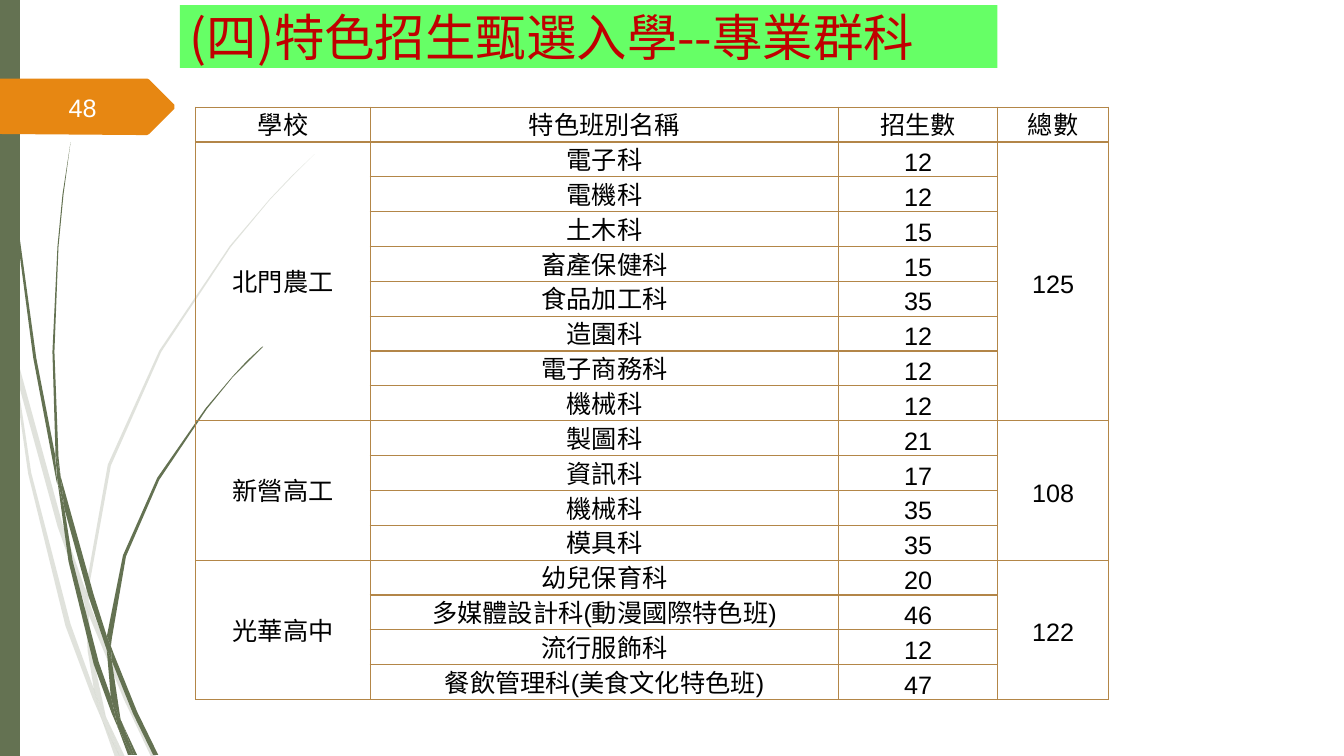
from lxml.etree import SubElement
from pptx import Presentation
from pptx.dml.color import RGBColor
from pptx.enum.shapes import MSO_SHAPE
from pptx.enum.text import MSO_ANCHOR, PP_ALIGN
from pptx.oxml.ns import qn
from pptx.util import Cm, Pt

GREEN = RGBColor(0x64, 0x72, 0x52)
ORANGE = RGBColor(0xE7, 0x87, 0x12)
LIME = RGBColor(0x66, 0xFF, 0x66)
RED = RGBColor(0xC0, 0x00, 0x00)
BROWN = RGBColor(0xB3, 0x86, 0x48)
BLACK = RGBColor(0x00, 0x00, 0x00)
WHITE = RGBColor(0xFF, 0xFF, 0xFF)

OUTLINE_UNIT = Cm(2.54) / 100

PALE_BLADES = [
    [(11, 350), (8, 322), (0, 282), (0, 299), (10, 344)],
    [(57, 522), (84, 599), (85, 586), (62, 520), (14, 345), (17, 376)],
    [(92, 607), (88, 596), (88, 610), (123, 694), (150, 751), (155, 751), (127, 692)],
    [(119, 751), (124, 751), (105, 711)],
    [(93, 683), (70, 619), (31, 469), (17, 376), (11, 350), (28, 470), (65, 621),
     (92, 693), (101, 714), (99, 707)],
    [(84, 599), (87, 646), (93, 683), (96, 692), (105, 711), (104, 706), (91, 646),
     (88, 610), (88, 608)],
    [(88, 584), (110, 462), (160, 349), (229, 245), (268, 198), (290, 175), (312, 153),
     (289, 175), (268, 197), (228, 244), (158, 348), (107, 461), (85, 584), (85, 586),
     (88, 596)],
    [(101, 714), (114, 751), (119, 751)],
    [(88, 608), (88, 610), (88, 596), (85, 586), (84, 599)],
    [(96, 692), (93, 683), (99, 707), (101, 714), (119, 751), (105, 711)],
]

DARK_BLADES = [
    [(7, 110), (17, 233), (33, 355), (56, 477), (57, 481), (55, 457), (55, 453),
     (36, 355), (19, 232), (8, 109), (5, 48), (3, 0), (3, 48)],
    [(88, 592), (106, 645), (106, 633), (106, 631), (93, 590), (60, 472), (64, 505)],
    [(113, 649), (110, 641), (111, 656), (132, 708), (152, 749), (157, 749), (136, 706)],
    [(110, 691), (98, 657), (72, 556), (64, 505), (57, 477), (68, 557), (93, 659),
     (111, 708), (117, 722), (116, 717)],
    [(60, 472), (58, 453), (54, 349), (58, 245), (63, 193), (70, 141), (62, 193),
     (57, 245), (52, 349), (55, 449)],
    [(133, 749), (136, 749), (122, 719)],
    [(57, 477), (64, 505), (60, 472), (55, 449), (55, 453)],
    [(111, 633), (125, 552), (158, 476), (205, 406), (231, 374), (246, 359), (261, 344),
     (260, 344), (245, 358), (231, 373), (204, 405), (156, 474), (122, 551), (106, 631),
     (110, 641)],
    [(117, 722), (127, 749), (131, 749)],
    [(106, 645), (110, 692), (116, 706), (122, 719), (120, 716), (111, 656), (109, 651)],
    [(106, 645), (109, 651), (111, 656), (110, 641), (106, 631), (106, 633)],
    [(116, 706), (110, 691), (116, 717), (117, 722), (131, 749), (133, 749), (122, 719)],
]

PAGE_ARROW = [(173, 108), (148, 133), (146, 134), (136, 134), (-1, 133), (0, 78),
              (146, 78), (148, 79), (173, 104)]

HEADERS = ["學校", "特色班別名稱", "招生數", "總數"]
COLUMN_WIDTHS = [4.4, 11.8, 4.0, 2.8]
SCHOOLS = [
    ("北門農工", 125, [("電子科", 12), ("電機科", 12), ("土木科", 15), ("畜產保健科", 15),
                   ("食品加工科", 35), ("造園科", 12), ("電子商務科", 12), ("機械科", 12)]),
    ("新營高工", 108, [("製圖科", 21), ("資訊科", 17), ("機械科", 35), ("模具科", 35)]),
    ("光華高中", 122, [("幼兒保育科", 20), ("多媒體設計科(動漫國際特色班)", 46),
                   ("流行服飾科", 12), ("餐飲管理科(美食文化特色班)", 47)]),
]


class SlideBuilder:
    """Draws styled elements on one slide."""

    def __init__(self, slide):
        self.slide = slide
        self.body_font = "Arial"
        self.title_font = "Noto Sans CJK SC"
        self.body_size = 18
        self.title_size = 36

    def paint(self, shape, color, opacity=100):
        shape.shadow.inherit = False
        shape.fill.solid()
        shape.fill.fore_color.rgb = color
        shape.line.fill.background()
        if opacity < 100:
            color_element = shape._element.spPr.find(qn("a:solidFill"))[0]
            SubElement(color_element, qn("a:alpha"), val=str(opacity * 1000))

    def outline(self, points, color, opacity=100):
        builder = self.slide.shapes.build_freeform(*points[0], scale=OUTLINE_UNIT)
        builder.add_line_segments(points[1:], close=True)
        self.paint(builder.convert_to_shape(), color, opacity)

    def rectangle(self, left, top, width, height, color):
        shape = self.slide.shapes.add_shape(
            MSO_SHAPE.RECTANGLE, Cm(left), Cm(top), Cm(width), Cm(height))
        self.paint(shape, color)
        return shape

    def set_text(self, frame, text, font, size, color, alignment=PP_ALIGN.LEFT):
        frame.word_wrap = True
        frame.vertical_anchor = MSO_ANCHOR.MIDDLE
        paragraph = frame.paragraphs[0]
        paragraph.text = text
        paragraph.alignment = alignment
        paragraph.font.name = font
        paragraph.font.size = Pt(size)
        paragraph.font.color.rgb = color
        return paragraph

    def title(self, left, top, width, height, text):
        shape = self.rectangle(left, top, width, height, LIME)
        self.set_text(shape.text_frame, text, self.title_font, self.title_size, RED)

    def page_number(self, left, top, width, height, text):
        box = self.slide.shapes.add_textbox(Cm(left), Cm(top), Cm(width), Cm(height))
        self.set_text(box.text_frame, text, self.body_font, self.body_size, WHITE)

    def cell(self, cell, text):
        cell.margin_left = cell.margin_right = cell.margin_top = Cm(0.03)
        cell.margin_bottom = 0
        paragraph = self.set_text(cell.text_frame, text, self.body_font, self.body_size,
                                  BLACK, PP_ALIGN.CENTER)
        paragraph.line_spacing = Pt(24)
        cell.vertical_anchor = MSO_ANCHOR.MIDDLE
        properties = cell._tc.get_or_add_tcPr()
        for side in ("a:lnL", "a:lnR", "a:lnT", "a:lnB"):
            border = SubElement(properties, qn(side), w=str(int(Pt(1))))
            fill = SubElement(border, qn("a:solidFill"))
            SubElement(fill, qn("a:srgbClr"), val=str(BROWN))
        cell.fill.background()

    def table(self, left, top, widths, row_height, rows, groups):
        table = self.slide.shapes.add_table(
            len(rows), len(widths), Cm(left), Cm(top),
            Cm(sum(widths)), Cm(row_height * len(rows))).table
        table.first_row = table.horz_banding = False
        for column, width in zip(table.columns, widths):
            column.width = Cm(width)
        for row_index, row in enumerate(rows):
            table.rows[row_index].height = Cm(row_height)
            for column_index, text in enumerate(row):
                self.cell(table.cell(row_index, column_index), text)
        for first, last in groups:
            for column_index in (0, len(widths) - 1):
                table.cell(first, column_index).merge(table.cell(last, column_index))


def main():
    presentation = Presentation()
    presentation.slide_width = Cm(33.86)
    presentation.slide_height = Cm(19.05)
    builder = SlideBuilder(presentation.slides.add_slide(presentation.slide_layouts[6]))

    for blade in PALE_BLADES:
        builder.outline(blade, GREEN, 20)
    for blade in DARK_BLADES:
        builder.outline(blade, GREEN)
    builder.rectangle(0, 0, 0.5, 19.05, GREEN)
    builder.outline(PAGE_ARROW, ORANGE)
    builder.title(4.53, 0.13, 20.6, 1.58, "(四)特色招生甄選入學--專業群科")
    builder.page_number(1.48, 2.19, 2.15, 1.01, "48")

    rows, groups = [HEADERS], []
    for school, total, classes in SCHOOLS:
        groups.append((len(rows), len(rows) + len(classes) - 1))
        for index, (name, places) in enumerate(classes):
            edges = ("", "") if index else (school, str(total))
            rows.append([edges[0], name, str(places), edges[1]])
    builder.table(4.93, 2.7, COLUMN_WIDTHS, 0.87, rows, groups)

    presentation.save("out.pptx")


if __name__ == "__main__":
    main()
